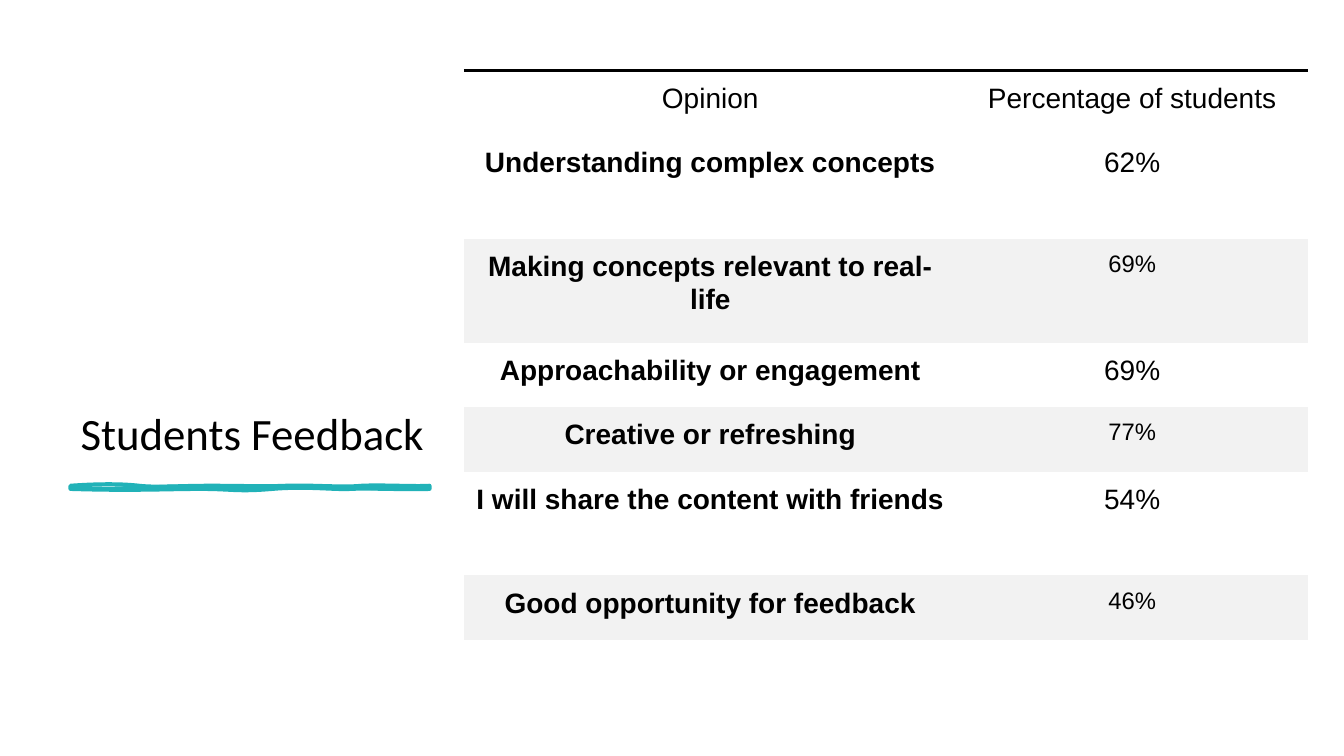
from lxml import etree
from pptx import Presentation
from pptx.dml.color import RGBColor
from pptx.enum.shapes import MSO_SHAPE
from pptx.enum.text import MSO_ANCHOR, PP_ALIGN
from pptx.oxml.ns import qn
from pptx.util import Inches, Pt

BLACK = RGBColor(0x00, 0x00, 0x00)
WHITE = RGBColor(0xFF, 0xFF, 0xFF)
TEAL = RGBColor(0x21, 0xB2, 0xB8)
BAND_GREY = RGBColor(0xF2, 0xF2, 0xF2)
NO_STYLE = "{2D5ABB26-0587-4C30-8999-92F81FD0307C}"

TITLE = "Students Feedback"
HEADER = ("Opinion", "Percentage of students")
# opinion, share of students, row height in inches
OPINIONS = [
    ("Understanding complex concepts", "62%", 1.03),
    ("Making concepts relevant to real-life", "69%", 1.03),
    ("Approachability or engagement", "69%", 0.64),
    ("Creative or refreshing", "77%", 0.64),
    ("I will share the content with friends", "54%", 1.03),
    ("Good opportunity for feedback", "46%", 0.64),
]
HEADER_HEIGHT = 0.64
COLUMN_WIDTHS = (4.89, 3.48)
TABLE_LEFT, TABLE_TOP = 4.6, 0.7

# Brush strokes in hundredths of an inch: cubic curves (control, control, end)
BRUSH_START = (70, 482)
BRUSH_SIZE = (356, 3)
BRUSH_OUTLINE = [
    ((97, 480), (121, 480), (138, 482)),
    ((155, 484), (177, 482), (209, 482)),
    ((241, 482), (260, 483), (284, 482)),
    ((308, 481), (339, 484), (359, 482)),
    ((379, 481), (412, 483), (426, 482)),
    ((426, 483), (426, 485), (426, 485)),
    ((408, 486), (364, 484), (348, 485)),
    ((332, 486), (304, 482), (270, 485)),
    ((235, 488), (231, 485), (199, 485)),
    ((166, 485), (132, 487), (70, 485)),
    ((70, 484), (70, 483), (70, 482)),
]
BRUSH_BODY = [
    ((102, 484), (110, 483), (138, 482)),
    ((166, 481), (169, 480), (199, 482)),
    ((228, 484), (261, 483), (277, 482)),
    ((293, 481), (327, 485), (344, 482)),
    ((362, 480), (397, 486), (426, 482)),
    ((426, 484), (426, 484), (426, 485)),
    ((412, 485), (372, 488), (355, 485)),
    ((338, 483), (309, 485), (277, 485)),
    ((244, 485), (240, 484), (216, 485)),
    ((193, 486), (179, 484), (145, 485)),
    ((111, 486), (92, 485), (70, 485)),
    ((70, 484), (70, 484), (70, 482)),
]


def add_background(slide, width, height):
    background = slide.shapes.add_shape(MSO_SHAPE.RECTANGLE, 0, 0, width, height)
    background.shadow.inherit = False
    background.fill.solid()
    background.fill.fore_color.rgb = WHITE
    background.line.fill.background()


def add_title(slide):
    box = slide.shapes.add_textbox(Inches(0.7), Inches(0.7), Inches(3.91), Inches(3.91))
    frame = box.text_frame
    frame.word_wrap = True
    frame.vertical_anchor = MSO_ANCHOR.BOTTOM
    paragraph = frame.paragraphs[0]
    paragraph.text = TITLE
    paragraph.line_spacing = 0.9
    paragraph.font.name = "Calibri"
    paragraph.font.size = Pt(32)
    paragraph.font.color.rgb = BLACK


def add_curved_contour(contours, curves, **paint):
    """Append one closed contour of cubic curves, relative to the brush start."""
    width, height = BRUSH_SIZE
    contour = etree.SubElement(contours, qn("a:path"), w=str(width), h=str(height), **paint)

    def add_segment(tag, points):
        segment = etree.SubElement(contour, qn(tag))
        for x, y in points:
            etree.SubElement(segment, qn("a:pt"),
                             x=str(x - BRUSH_START[0]), y=str(y - BRUSH_START[1]))

    add_segment("a:moveTo", [BRUSH_START])
    for curve in curves:
        add_segment("a:cubicBezTo", curve)
    etree.SubElement(contour, qn("a:close"))


def add_brush(slide):
    builder = slide.shapes.build_freeform(*BRUSH_START, scale=Inches(0.01))
    builder.add_line_segments([curve[-1] for curve in BRUSH_OUTLINE])
    brush = builder.convert_to_shape()
    contours = brush._element.spPr.find(".//" + qn("a:pathLst"))
    contours.remove(contours[0])
    add_curved_contour(contours, BRUSH_OUTLINE, fill="none")
    add_curved_contour(contours, BRUSH_BODY, stroke="0")
    brush.shadow.inherit = False
    brush.fill.solid()
    brush.fill.fore_color.rgb = TEAL
    brush.line.color.rgb = TEAL
    brush.line.width = Pt(3)


def set_top_border(cell):
    border = etree.Element(qn("a:lnT"), w=str(Pt(2.25)))
    fill = etree.SubElement(border, qn("a:solidFill"))
    etree.SubElement(fill, qn("a:srgbClr"), val=str(BLACK))
    cell._tc.get_or_add_tcPr().insert(0, border)


def fill_cell(cell, text, size, bold, banded):
    cell.margin_left = cell.margin_right = Inches(0.11)
    cell.margin_top = cell.margin_bottom = Inches(0.1)
    if banded:
        cell.fill.solid()
        cell.fill.fore_color.rgb = BAND_GREY
    else:
        cell.fill.background()
    paragraph = cell.text_frame.paragraphs[0]
    paragraph.text = text
    paragraph.alignment = PP_ALIGN.CENTER
    paragraph.line_spacing = 1.07
    paragraph.space_before, paragraph.space_after = Pt(12), Pt(8)
    font = paragraph.font
    font.name, font.size, font.bold = "Arial", Pt(size), bold
    font.color.rgb = BLACK


def add_feedback_table(slide):
    rows = [(*HEADER, HEADER_HEIGHT), *OPINIONS]
    height = sum(row[-1] for row in rows)
    frame = slide.shapes.add_table(
        len(rows), len(COLUMN_WIDTHS), Inches(TABLE_LEFT), Inches(TABLE_TOP),
        Inches(sum(COLUMN_WIDTHS)), Inches(height))
    table = frame.table
    table.first_row = table.horz_banding = False
    table._tbl.tblPr.find(qn("a:tableStyleId")).text = NO_STYLE
    for column, width in zip(table.columns, COLUMN_WIDTHS):
        column.width = Inches(width)
    for index, (opinion, share, row_height) in enumerate(rows):
        table.rows[index].height = Inches(row_height)
        banded = index > 0 and index % 2 == 0
        fill_cell(table.cell(index, 0), opinion, 20, index > 0, banded)
        fill_cell(table.cell(index, 1), share, 17 if banded else 20, False, banded)
    for cell in table.rows[0].cells:
        set_top_border(cell)


def main():
    presentation = Presentation()
    presentation.slide_width, presentation.slide_height = Inches(13.33), Inches(7.5)
    slide = presentation.slides.add_slide(presentation.slide_layouts[6])
    add_background(slide, presentation.slide_width, presentation.slide_height)
    add_title(slide)
    add_brush(slide)
    add_feedback_table(slide)
    presentation.save("out.pptx")


if __name__ == "__main__":
    main()
